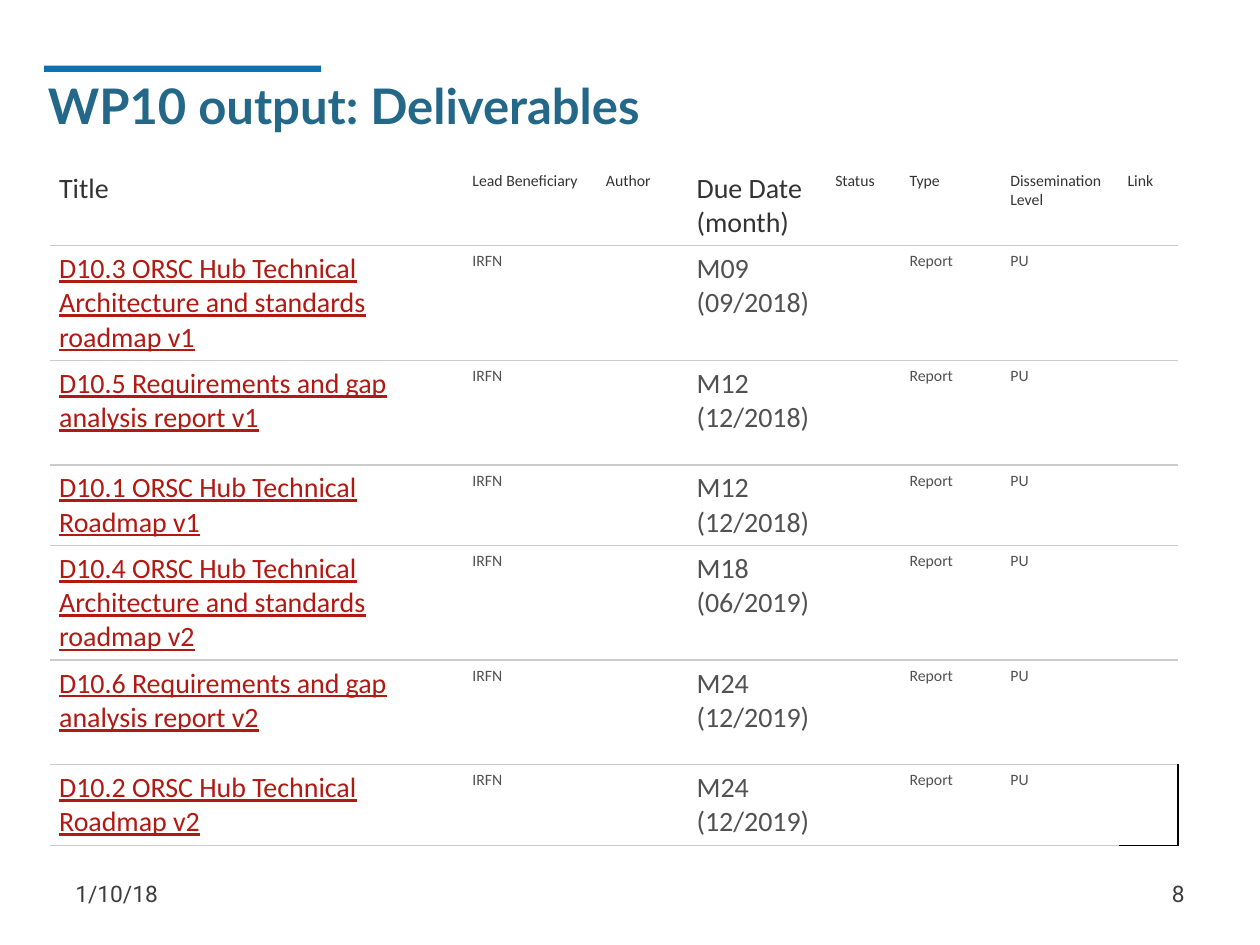
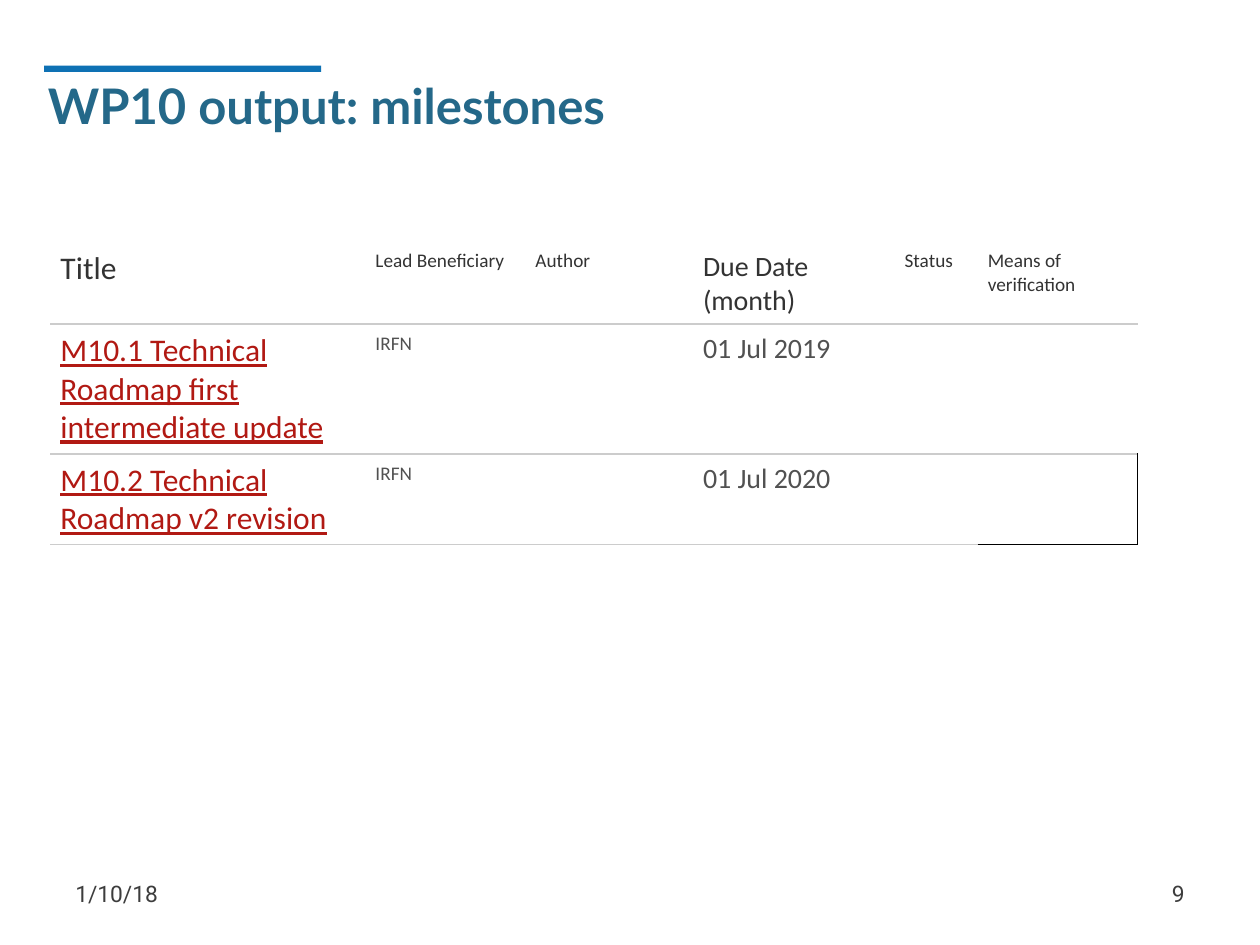
"""Build the two WP10 output slides: deliverables and milestones."""
from lxml import etree
from pptx import Presentation
from pptx.dml.color import RGBColor
from pptx.enum.shapes import MSO_SHAPE
from pptx.enum.text import MSO_ANCHOR, MSO_AUTO_SIZE, PP_ALIGN
from pptx.oxml.ns import qn
from pptx.util import Inches, Pt

RECTANGLE = MSO_SHAPE.RECTANGLE
MIDDLE = MSO_ANCHOR.MIDDLE
NO_AUTOFIT = MSO_AUTO_SIZE.NONE
LEFT, RIGHT = PP_ALIGN.LEFT, PP_ALIGN.RIGHT

WHITE = RGBColor(0xFF, 0xFF, 0xFF)
BLACK = RGBColor(0x00, 0x00, 0x00)
BAR_BLUE = RGBColor(0x0E, 0x71, 0xB4)
TITLE_BLUE = RGBColor(0x24, 0x68, 0x89)
FOOTER_GREY = RGBColor(0x3D, 0x3D, 0x3D)
HEADER_GREY = RGBColor(0x33, 0x33, 0x33)
BODY_GREY = RGBColor(0x51, 0x51, 0x51)
RULE_GREY = RGBColor(0xCC, 0xCC, 0xCC)
LINK_RED = RGBColor(0xB1, 0x19, 0x13)

PLAIN_TABLE_STYLE = "{2D5ABB26-0587-4C30-8999-92F81FD0307C}"
TABLE_LEFT = 0.4
DATE = "1/10/18"
PARTNER = "IRFN"
PROJECT = "ORSC Hub"
DUE_DATE = "Due Date (month)"


def deliverable(title, due):
    return [title, PARTNER, "", due, "", "Report", "PU", ""]


def milestone(title, due):
    return [title, PARTNER, "", due, "", ""]


SLIDES = [
    {
        "title": "WP10 output: Deliverables",
        "number": 8,
        "top": 1.31,
        "columns": [3.28, 1.06, 0.72, 1.1, 0.59, 0.8, 0.93, 0.47],
        "heights": [0.64, 0.91, 0.83, 0.64, 0.91, 0.83, 0.64],
        "sizes": {"title": 16, "due": 16, "small": 9},
        "margins": {"side": 0.07, "header_right": 0.1, "vertical": 0.05},
        "rows": [
            ["Title", "Lead Beneficiary", "Author", DUE_DATE, "Status",
             "Type", "Dissemination Level", "Link"],
            deliverable(f"D10.3 {PROJECT} Technical Architecture and standards roadmap v1",
                        "M09 (09/2018)"),
            deliverable("D10.5 Requirements and gap analysis report v1", "M12 (12/2018)"),
            deliverable(f"D10.1 {PROJECT} Technical Roadmap v1", "M12 (12/2018)"),
            deliverable(f"D10.4 {PROJECT} Technical Architecture and standards roadmap v2",
                        "M18 (06/2019)"),
            deliverable("D10.6 Requirements and gap analysis report v2", "M24 (12/2019)"),
            deliverable(f"D10.2 {PROJECT} Technical Roadmap v2", "M24 (12/2019)"),
        ],
    },
    {
        "title": "WP10 output: milestones",
        "number": 9,
        "top": 1.92,
        "columns": [2.5, 1.27, 1.33, 1.6, 0.66, 1.27],
        "heights": [0.65, 1.03, 0.72],
        "sizes": {"title": 18, "due": 16, "small": 11},
        "margins": {"side": 0.08, "header_right": 0.12, "vertical": 0.06},
        "rows": [
            ["Title", "Lead Beneficiary", "Author", DUE_DATE, "Status",
             "Means of verification"],
            milestone("M10.1 Technical Roadmap first intermediate update", "01 Jul 2019"),
            milestone("M10.2 Technical Roadmap v2 revision", "01 Jul 2020"),
        ],
    },
]


def style_font(paragraph, name, size, color):
    font = paragraph.font
    font.name, font.size = name, Pt(size)
    font.color.rgb = color
    return font


def add_title(slide, text):
    bar = slide.shapes.add_shape(RECTANGLE, Inches(0.35), Inches(0.52), Inches(2.2), Inches(0.05))
    bar.shadow.inherit = False
    bar.fill.solid()
    bar.fill.fore_color.rgb = BAR_BLUE
    bar.line.fill.background()
    title = slide.shapes.title
    title.left, title.top = Inches(0.28), Inches(0.52)
    title.width, title.height = Inches(6.93), Inches(0.63)
    frame = title.text_frame
    frame.text = text
    frame.auto_size = NO_AUTOFIT
    frame.vertical_anchor = MIDDLE
    paragraph = frame.paragraphs[0]
    paragraph.alignment = LEFT
    style_font(paragraph, "Lato", 28, TITLE_BLUE).bold = True


def add_footer(slide, left, text, alignment):
    box = slide.shapes.add_textbox(Inches(left), Inches(6.89), Inches(2.33), Inches(0.4))
    frame = box.text_frame
    frame.word_wrap = True
    frame.vertical_anchor = MIDDLE
    frame.text = text
    paragraph = frame.paragraphs[0]
    paragraph.alignment = alignment
    style_font(paragraph, "Roboto", 13, FOOTER_GREY)


def add_border(cell, side, color):
    properties = cell._tc.get_or_add_tcPr()
    line = etree.SubElement(properties, qn(f"a:{side}"), w=str(Pt(1)))
    fill = etree.SubElement(line, qn("a:solidFill"))
    etree.SubElement(fill, qn("a:srgbClr"), val=str(color))


def format_cell(cell, text, kind, is_header, is_last, content):
    margins = content["margins"]
    cell.margin_left = Inches(margins["side"])
    cell.margin_right = Inches(margins["header_right" if is_header else "side"])
    cell.margin_top = cell.margin_bottom = Inches(margins["vertical"])
    if is_last:
        add_border(cell, "lnR", BLACK)
        add_border(cell, "lnT", RULE_GREY)
    add_border(cell, "lnB", BLACK if is_last else RULE_GREY)
    if is_last:
        cell.fill.background()
    else:
        cell.fill.solid()
        cell.fill.fore_color.rgb = WHITE
    cell.text = text
    is_link = kind == "title" and not is_header
    color = HEADER_GREY if is_header else LINK_RED if is_link else BODY_GREY
    font = style_font(cell.text_frame.paragraphs[0], "Calibri", content["sizes"][kind], color)
    if is_link:
        font.underline = True


def add_output_table(slide, content):
    rows, columns, heights = content["rows"], content["columns"], content["heights"]
    frame = slide.shapes.add_table(
        len(rows), len(columns), Inches(TABLE_LEFT), Inches(content["top"]),
        Inches(sum(columns)), Inches(sum(heights)))
    table = frame.table
    table.first_row = table.horz_banding = False
    table._tbl.tblPr.find(qn("a:tableStyleId")).text = PLAIN_TABLE_STYLE
    for column, width in zip(table.columns, columns):
        column.width = Inches(width)
    for row, height in zip(table.rows, heights):
        row.height = Inches(height)
    kinds = {rows[0].index("Title"): "title", rows[0].index(DUE_DATE): "due"}
    last = (len(rows) - 1, len(columns) - 1)
    for row_index, texts in enumerate(rows):
        for column_index, text in enumerate(texts):
            format_cell(table.cell(row_index, column_index), text,
                        kinds.get(column_index, "small"), row_index == 0,
                        (row_index, column_index) == last, content)


def main():
    presentation = Presentation()
    presentation.slide_width, presentation.slide_height = Inches(10), Inches(7.5)
    title_only = presentation.slide_layouts.get_by_name("Title Only")
    for content in SLIDES:
        slide = presentation.slides.add_slide(title_only)
        add_title(slide, content["title"])
        add_footer(slide, 7.17, str(content["number"]), RIGHT)
        add_footer(slide, 0.5, DATE, LEFT)
        add_output_table(slide, content)
    presentation.save("out.pptx")


if __name__ == "__main__":
    main()
